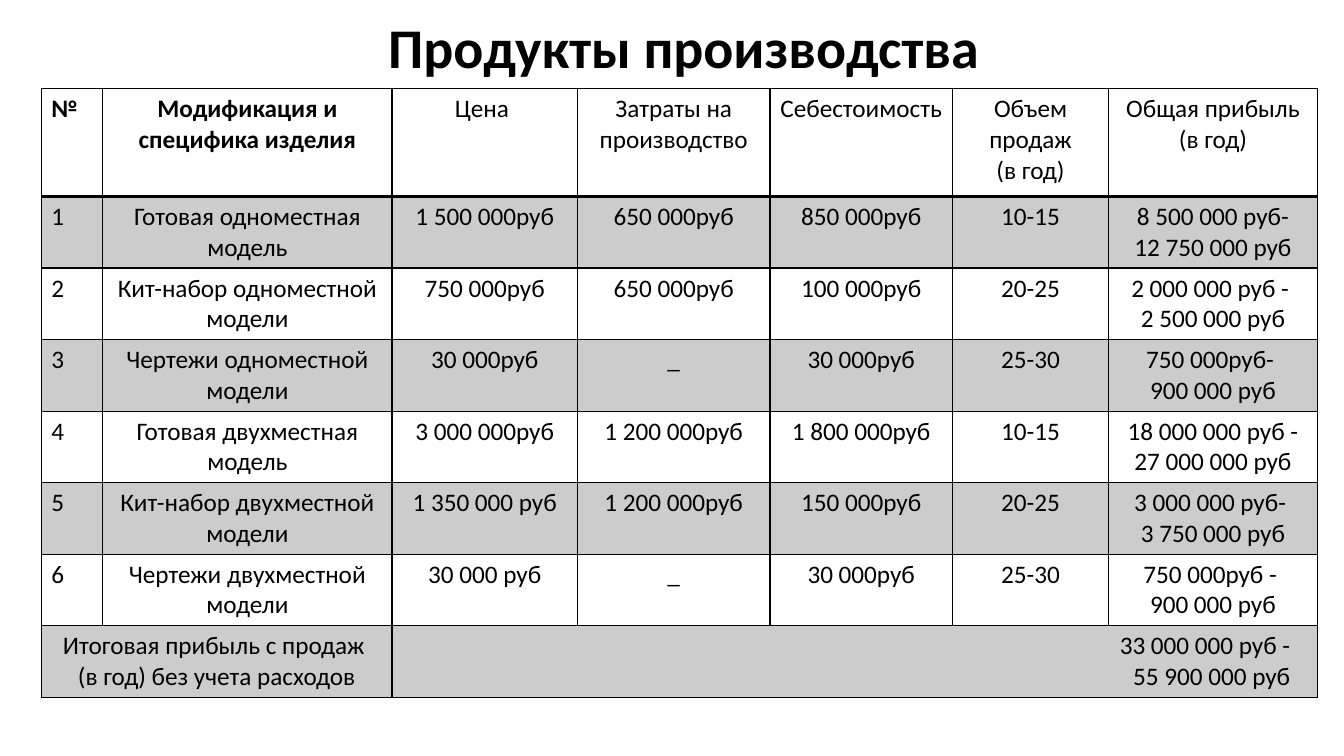
"""Build a slide with a table of products, prices and yearly profit."""
from lxml import etree
from pptx import Presentation
from pptx.dml.color import RGBColor
from pptx.enum.text import MSO_ANCHOR, MSO_AUTO_SIZE, PP_ALIGN
from pptx.oxml.ns import qn
from pptx.util import Pt

LEFT, CENTER, RIGHT = PP_ALIGN.LEFT, PP_ALIGN.CENTER, PP_ALIGN.RIGHT
MIDDLE = MSO_ANCHOR.MIDDLE
FIT_SHAPE = MSO_AUTO_SIZE.SHAPE_TO_FIT_TEXT
BLACK = RGBColor(0x00, 0x00, 0x00)
GRAY = RGBColor(0xCC, 0xCC, 0xCC)
FONT = "Calibri"

COLUMN_WIDTHS = [43.92, 206.64, 132.48, 137.52, 130.32, 111.6, 149.04]
HEADER_HEIGHT, ROW_HEIGHT = 77, 51.1
ROWS = [
    ["№", "Модификация и специфика изделия", "Цена ", "Затраты на производство",
     "Себестоимость", "Объем продаж\n(в год)", "Общая прибыль\n(в год)"],
    ["1", "Готовая одноместная модель", "1 500 000руб", "650 000руб",
     "850 000руб", "10-15", "8 500 000 руб-\n12 750 000 руб"],
    ["2", "Кит-набор одноместной модели", "750 000руб", "650 000руб",
     "100 000руб", "20-25", "2 000 000 руб - \n2 500 000 руб"],
    ["3", "Чертежи одноместной модели", "30 000руб", "_",
     "30 000руб", "25-30", "750 000руб- \n900 000 руб"],
    ["4", "Готовая двухместная модель", "3 000 000руб", "1 200 000руб",
     "1 800 000руб", "10-15", "18 000 000 руб - 27 000 000 руб"],
    ["5", "Кит-набор двухместной модели", "1 350 000 руб", "1 200 000руб",
     "150 000руб", "20-25", "3 000 000 руб- \n3 750 000 руб"],
    ["6", "Чертежи двухместной модели", "30 000 руб", "_",
     "30 000руб", "25-30", "750 000руб - \n900 000 руб"],
    ["Итоговая прибыль с продаж \n(в год) без учета расходов", "",
     "33 000 000 руб -\n55 900 000 руб", "", "", "", ""],
]
TOTAL_ROW = len(ROWS) - 1


def format_text(paragraph, size, bold, alignment):
    paragraph.alignment = alignment
    for run in paragraph.runs:
        run.font.name = FONT
        run.font.size = Pt(size)
        run.font.bold = bold
        run.font.color.rgb = BLACK


def add_border(cell, side, width):
    properties = cell._tc.get_or_add_tcPr()
    line = etree.SubElement(properties, qn(f"a:ln{side}"), w=str(Pt(width)))
    fill = etree.SubElement(line, qn("a:solidFill"))
    etree.SubElement(fill, qn("a:srgbClr"), val=str(BLACK))


presentation = Presentation()
presentation.slide_width = Pt(960)
presentation.slide_height = Pt(540)
slide = presentation.slides.add_slide(presentation.slide_layouts[5])

title = slide.shapes.title
title.left, title.top, title.width, title.height = Pt(265.7), Pt(5), Pt(445), Pt(55.5)
title.text_frame.text = "Продукты производства"
title.text_frame.word_wrap = False
title.text_frame.auto_size = FIT_SHAPE
title.text_frame.vertical_anchor = MIDDLE
format_text(title.text_frame.paragraphs[0], 40, True, CENTER)

table_height = HEADER_HEIGHT + TOTAL_ROW * ROW_HEIGHT
table = slide.shapes.add_table(
    len(ROWS), len(COLUMN_WIDTHS), Pt(29.5), Pt(63.4),
    Pt(sum(COLUMN_WIDTHS)), Pt(table_height)).table
table.first_row = False
table.horz_banding = False
for column, width in zip(table.columns, COLUMN_WIDTHS):
    column.width = Pt(width)

for row_index, texts in enumerate(ROWS):
    table.rows[row_index].height = Pt(ROW_HEIGHT if row_index else HEADER_HEIGHT)
    for column_index, text in enumerate(texts):
        cell = table.cell(row_index, column_index)
        add_border(cell, "L", 1)
        add_border(cell, "R", 1)
        add_border(cell, "T", 2 if row_index == 1 else 1)
        add_border(cell, "B", 2 if row_index == 0 else 1)
        if row_index % 2:
            cell.fill.solid()
            cell.fill.fore_color.rgb = GRAY
        else:
            cell.fill.background()
        if row_index == TOTAL_ROW:
            alignment = RIGHT if column_index == 2 else CENTER
        else:
            alignment = CENTER if column_index else LEFT
        cell.text_frame.text = text
        for paragraph in cell.text_frame.paragraphs:
            format_text(paragraph, 18, row_index == 0 and column_index < 2, alignment)

table.cell(TOTAL_ROW, 0).merge(table.cell(TOTAL_ROW, 1))
total = table.cell(TOTAL_ROW, 2)
total.merge(table.cell(TOTAL_ROW, 6))
total.margin_right = Pt(11.3)
total.text_frame.paragraphs[0]._p.get_or_add_pPr().set("marR", str(Pt(8)))

presentation.save("out.pptx")
